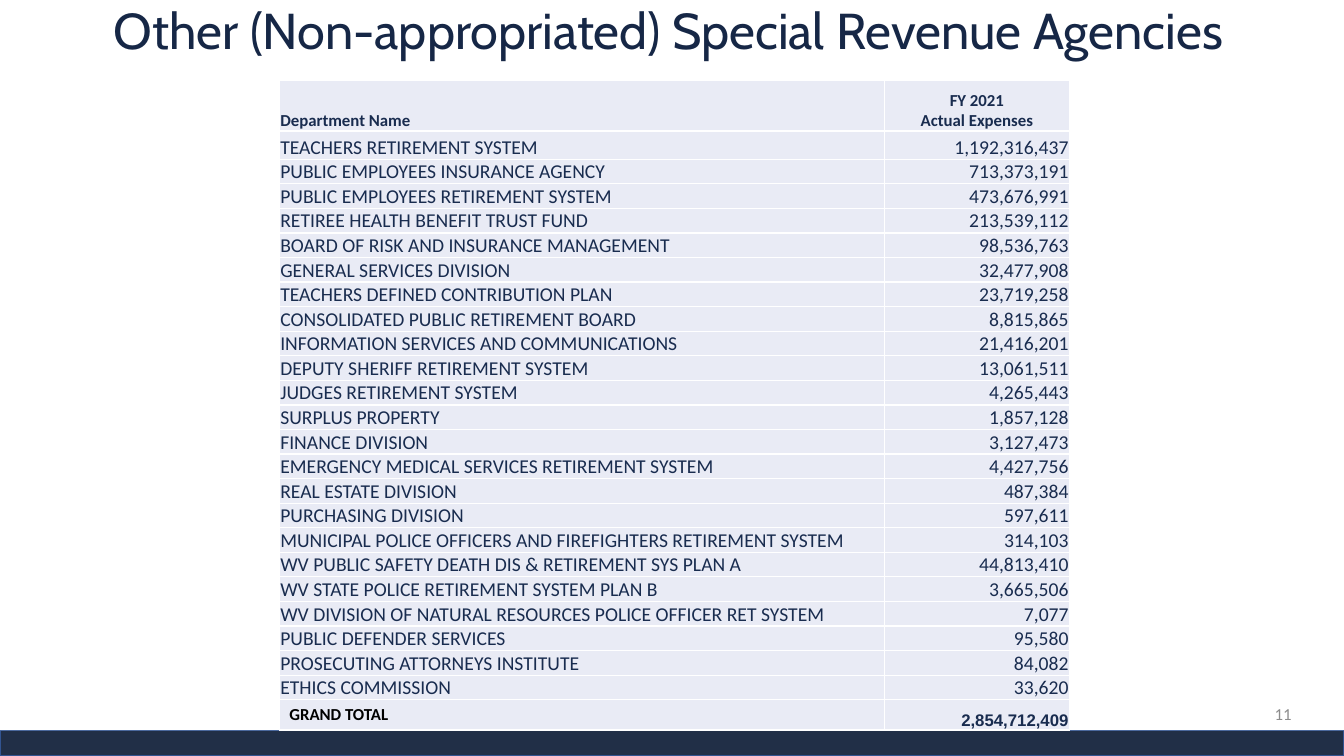
"""Build a slide with a table of special revenue agency expenses."""
import pptx
import pptx.dml.color
import pptx.enum.shapes
import pptx.enum.text
import pptx.oxml
import pptx.oxml.ns
import pptx.util

SLIDE_WIDTH = pptx.util.Inches(13.33)
SLIDE_HEIGHT = pptx.util.Inches(7.5)
ALIGN = pptx.enum.text.PP_ALIGN
ANCHOR = pptx.enum.text.MSO_ANCHOR
NAVY = "192C4F"
WHITE = "FFFFFF"

HEADER = ("Department Name", "FY 2021\nActual Expenses")
TOTAL = ("GRAND TOTAL", 2854712409)
AGENCIES = [
    ("TEACHERS RETIREMENT SYSTEM", 1192316437),
    ("PUBLIC EMPLOYEES INSURANCE AGENCY", 713373191),
    ("PUBLIC EMPLOYEES RETIREMENT SYSTEM", 473676991),
    ("RETIREE HEALTH BENEFIT TRUST FUND", 213539112),
    ("BOARD OF RISK AND INSURANCE MANAGEMENT", 98536763),
    ("GENERAL SERVICES DIVISION", 32477908),
    ("TEACHERS DEFINED CONTRIBUTION PLAN", 23719258),
    ("CONSOLIDATED PUBLIC RETIREMENT BOARD", 8815865),
    ("INFORMATION SERVICES AND COMMUNICATIONS", 21416201),
    ("DEPUTY SHERIFF RETIREMENT SYSTEM", 13061511),
    ("JUDGES RETIREMENT SYSTEM", 4265443),
    ("SURPLUS PROPERTY", 1857128),
    ("FINANCE DIVISION", 3127473),
    ("EMERGENCY MEDICAL SERVICES RETIREMENT SYSTEM", 4427756),
    ("REAL ESTATE DIVISION", 487384),
    ("PURCHASING DIVISION", 597611),
    ("MUNICIPAL POLICE OFFICERS AND FIREFIGHTERS RETIREMENT SYSTEM", 314103),
    ("WV PUBLIC SAFETY DEATH DIS & RETIREMENT SYS PLAN A", 44813410),
    ("WV STATE POLICE RETIREMENT SYSTEM PLAN B", 3665506),
    ("WV DIVISION OF NATURAL RESOURCES POLICE OFFICER RET SYSTEM", 7077),
    ("PUBLIC DEFENDER SERVICES", 95580),
    ("PROSECUTING ATTORNEYS INSTITUTE", 84082),
    ("ETHICS COMMISSION", 33620),
]


def color(value):
    return pptx.dml.color.RGBColor.from_string(value)


def across(percent):
    return round(SLIDE_WIDTH * percent / 100)


def down(percent):
    return round(SLIDE_HEIGHT * percent / 100)


def place(left, top, width, height):
    return across(left), down(top), across(width), down(height)


def style_text(text_frame, size, font_name, font_color, alignment, bold=False):
    for paragraph in text_frame.paragraphs:
        paragraph.alignment = alignment
        paragraph.font.size = pptx.util.Pt(size)
        paragraph.font.name = font_name
        paragraph.font.bold = bold
        paragraph.font.color.rgb = color(font_color)


def add_text(slide, box, text, size, font_name, font_color, alignment):
    text_frame = slide.shapes.add_textbox(*place(*box)).text_frame
    text_frame.word_wrap = True
    text_frame.vertical_anchor = ANCHOR.MIDDLE
    text_frame.text = text
    style_text(text_frame, size, font_name, font_color, alignment)
    return text_frame


def add_band(slide, top, height, fill, line=None):
    shape = slide.shapes.add_shape(
        pptx.enum.shapes.MSO_SHAPE.RECTANGLE, *place(0, top, 100, height))
    shape.shadow.inherit = False
    shape.fill.solid()
    shape.fill.fore_color.rgb = color(fill)
    if line:
        shape.line.color.rgb = color(line)
        shape.line.width = pptx.util.Pt(1)
    else:
        shape.line.fill.background()


def add_borders(cell):
    properties = cell._tc.get_or_add_tcPr()
    for side in ("lnL", "lnR", "lnT", "lnB"):
        properties.append(pptx.oxml.parse_xml(
            f'<a:{side} {pptx.oxml.ns.nsdecls("a")} w="{pptx.util.Pt(1)}">'
            f'<a:solidFill><a:srgbClr val="{WHITE}"/></a:solidFill></a:{side}>'))


def fill_cell(cell, text, *font, inset=True):
    add_borders(cell)
    cell.fill.solid()
    cell.fill.fore_color.rgb = color("E9EBF5")
    if inset:
        cell.vertical_anchor = ANCHOR.BOTTOM
        cell.margin_left = cell.margin_right = cell.margin_top = pptx.util.Inches(0.01)
        cell.margin_bottom = 0
    cell.text = text
    style_text(cell.text_frame, *font)


def add_expense_table(slide):
    widths = [45.01, 13.8]
    heights = [6.67, 3.73] + [3.2] * (len(AGENCIES) - 1) + [1.73]
    box = place(20.78, 10.67, sum(widths), sum(heights))
    table = slide.shapes.add_table(len(heights), len(widths), *box).table
    table.first_row = table.horz_banding = False
    for column, width in zip(table.columns, widths):
        column.width = across(width)
    for row, height in zip(table.rows, heights):
        row.height = down(height)

    fill_cell(table.cell(0, 0), HEADER[0], 12, "Calibri", NAVY, ALIGN.LEFT, True)
    fill_cell(table.cell(0, 1), HEADER[1], 12, "Calibri", NAVY, ALIGN.CENTER, True)
    for row, (name, expense) in enumerate(AGENCIES, start=1):
        fill_cell(table.cell(row, 0), name, 14, "Calibri", NAVY, ALIGN.LEFT)
        fill_cell(table.cell(row, 1), f"{expense:,}", 14, "Calibri", NAVY, ALIGN.RIGHT)
    last = len(heights) - 1
    fill_cell(table.cell(last, 0), TOTAL[0], 12, "Calibri", "000000", ALIGN.LEFT, True,
              inset=False)
    fill_cell(table.cell(last, 1), f"{TOTAL[1]:,}", 12, "Arial", NAVY, ALIGN.RIGHT, True)


def main():
    presentation = pptx.Presentation()
    presentation.slide_width = SLIDE_WIDTH
    presentation.slide_height = SLIDE_HEIGHT
    slide = presentation.slides.add_slide(presentation.slide_layouts[6])
    title = add_text(slide, (1.28, 0, 96.92, 8.67),
                     "Other (Non-appropriated) Special Revenue Agencies",
                     36, "Cabin", "162746", ALIGN.CENTER)
    title.paragraphs[0].line_spacing = 0.9
    add_band(slide, 96.67, 3.33, "212F47", "325491")
    add_band(slide, 95.93, 0.67, WHITE)
    add_expense_table(slide)
    add_text(slide, (70.67, 91.73, 26.18, 5.33), "11", 12, "Calibri", "8C8C8C", ALIGN.RIGHT)
    presentation.save("out.pptx")


if __name__ == "__main__":
    main()
